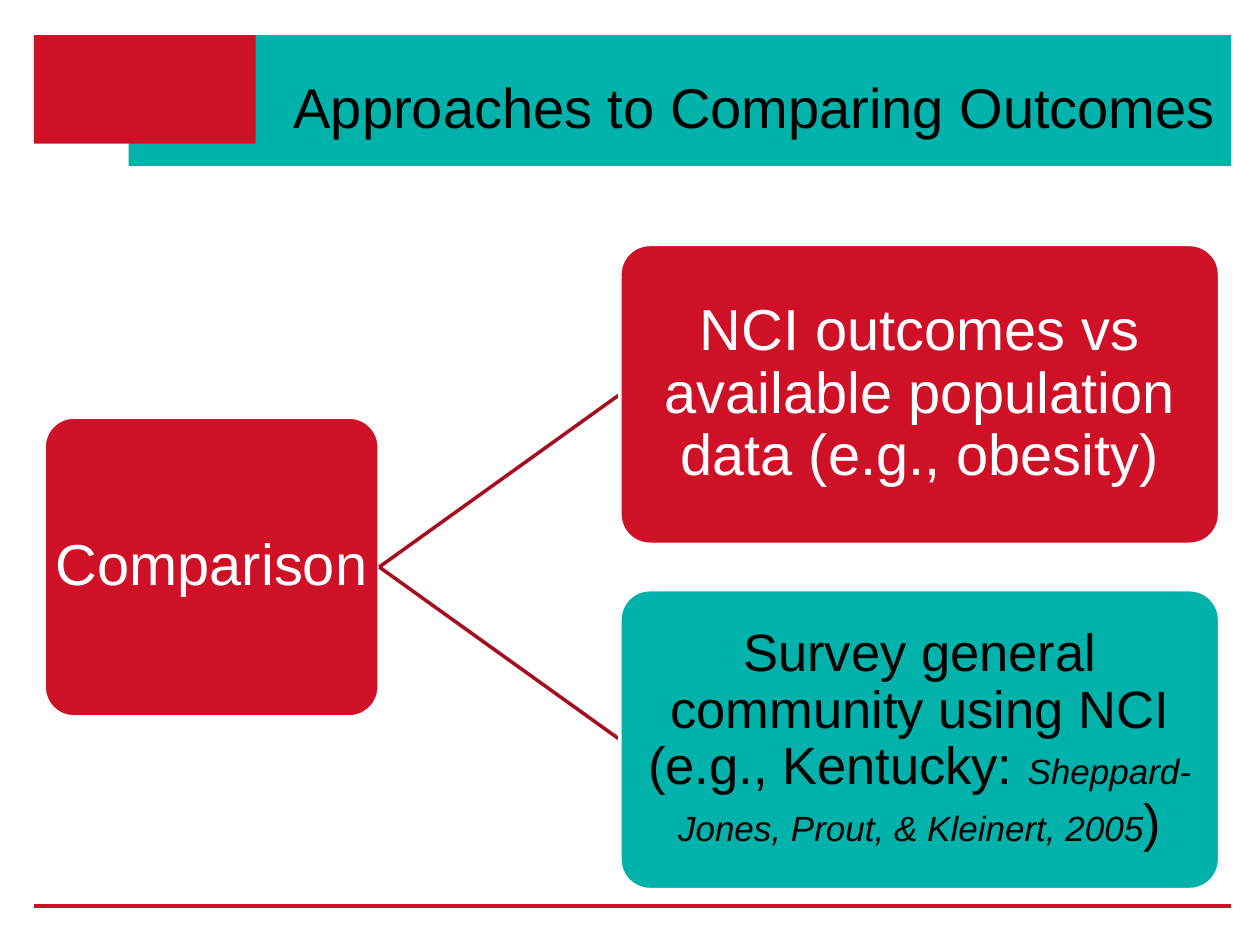
from collections import namedtuple

from lxml.etree import SubElement
from pptx import Presentation
from pptx.dml.color import RGBColor
from pptx.enum.shapes import MSO_CONNECTOR, MSO_SHAPE
from pptx.enum.text import MSO_ANCHOR, PP_ALIGN
from pptx.oxml.ns import qn
from pptx.util import Inches, Pt

COLORS = {
    "red": "CE1126",
    "teal": "00B2A9",
    "branch": "A50E1E",
    "white": "FFFFFF",
    "black": "000000",
}
FONT = "Arial"
WIDTH, HEIGHT = Inches(10), Inches(7.5)
COLUMN, ROW = WIDTH / 100, HEIGHT / 75
RIGHT, LEFT = 3, 1

Box = namedtuple("Box", "left top width height")
Card = namedtuple("Card", "spans size fill ink")

ROOT = Card([("Comparison", None)], 33, "red", "white")
LEAVES = [
    Card([("NCI outcomes vs available population data (e.g., obesity)", None)],
         33, "red", "white"),
    Card([("Survey general community using NCI (e.g., Kentucky: ", None),
          ("Sheppard-Jones, Prout, & Kleinert, 2005", 20),
          (")", None)],
         30, "teal", "black"),
]


def color(name):
    return RGBColor.from_string(COLORS[name])


def place(box):
    return (round(box.left * COLUMN), round(box.top * ROW),
            round(box.width * COLUMN), round(box.height * ROW))


def add_block(page, kind, box, fill):
    block = page.shapes.add_shape(kind, *place(box))
    block.shadow.inherit = False
    block.fill.solid()
    block.fill.fore_color.rgb = color(fill)
    block.line.fill.background()
    return block


def add_line(page, start, end, ink, weight):
    line = page.shapes.add_connector(
        MSO_CONNECTOR.STRAIGHT,
        round(start[0] * COLUMN), round(start[1] * ROW),
        round(end[0] * COLUMN), round(end[1] * ROW))
    line.line.color.rgb = color(ink)
    line.line.width = Pt(weight)
    SubElement(line._element.spPr, qn("a:effectLst"))
    return line


def style_paragraph(para, size, ink, align, spacing):
    para.alignment = align
    para.line_spacing = spacing
    para.font.name = FONT
    para.font.size = Pt(size)
    para.font.color.rgb = color(ink)


def add_header(page, box, title):
    band_indent, tab_width, tab_height = 7.5, 17.6, 8.6
    add_block(page, MSO_SHAPE.RECTANGLE,
              Box(box.left + band_indent, box.top,
                  box.width - band_indent, box.height), "teal")
    add_block(page, MSO_SHAPE.RECTANGLE,
              Box(box.left, box.top, tab_width, tab_height), "red")
    text_box = page.shapes.add_textbox(*place(
        Box(box.left + tab_width, box.top + 1.9, box.width - tab_width - 0.2, 6.9)))
    frame = text_box.text_frame
    frame.word_wrap = True
    frame.vertical_anchor = MSO_ANCHOR.BOTTOM
    para = frame.paragraphs[0]
    para.text = title
    style_paragraph(para, 32, "black", PP_ALIGN.RIGHT, Pt(25))


def add_card(page, box, card):
    shape = add_block(page, MSO_SHAPE.ROUNDED_RECTANGLE, box, card.fill)
    shape.adjustments[0] = 0.1
    shape.line.color.rgb = color("white")
    shape.line.width = Pt(2)
    frame = shape.text_frame
    frame.word_wrap = True
    frame.vertical_anchor = MSO_ANCHOR.MIDDLE
    frame.margin_left = frame.margin_right = Inches(0.02)
    frame.margin_top = frame.margin_bottom = Inches(0.02)
    para = frame.paragraphs[0]
    style_paragraph(para, card.size, card.ink, PP_ALIGN.CENTER, 0.9)
    for text, small_size in card.spans:
        span = para.add_run()
        span.text = text
        if small_size:
            span.font.size = Pt(small_size)
            span.font.italic = True
    return shape


def add_tree(page, box, root, leaves):
    root_width, leaf_width, gap = 26.6, 47.6, 3.6
    card_height = (box.height - gap * (len(leaves) - 1)) / len(leaves)
    middle = box.top + box.height / 2
    root_right = box.left + root_width
    leaf_left = box.left + box.width - leaf_width
    root_shape = add_card(
        page, Box(box.left, middle - card_height / 2, root_width, card_height), root)
    for index, leaf in enumerate(leaves):
        top = box.top + index * (card_height + gap)
        branch = add_line(page, (root_right, middle),
                          (leaf_left, top + card_height / 2), "branch", 2)
        leaf_shape = add_card(
            page, Box(leaf_left, top, leaf_width, card_height), leaf)
        branch.begin_connect(root_shape, RIGHT)
        branch.end_connect(leaf_shape, LEFT)


def add_footer(page, box):
    add_line(page, (box.left, box.top), (box.left + box.width, box.top), "red", 2.25)


def main():
    deck = Presentation()
    deck.slide_width, deck.slide_height = WIDTH, HEIGHT
    page = deck.slides.add_slide(deck.slide_layouts[6])
    add_header(page, Box(2.7, 2.8, 95, 10.4), "Approaches to Comparing Outcomes")
    add_footer(page, Box(2.7, 71.9, 95, 0))
    add_tree(page, Box(3.5, 19.4, 93.3, 51.2), ROOT, LEAVES)
    deck.save("out.pptx")


if __name__ == "__main__":
    main()
